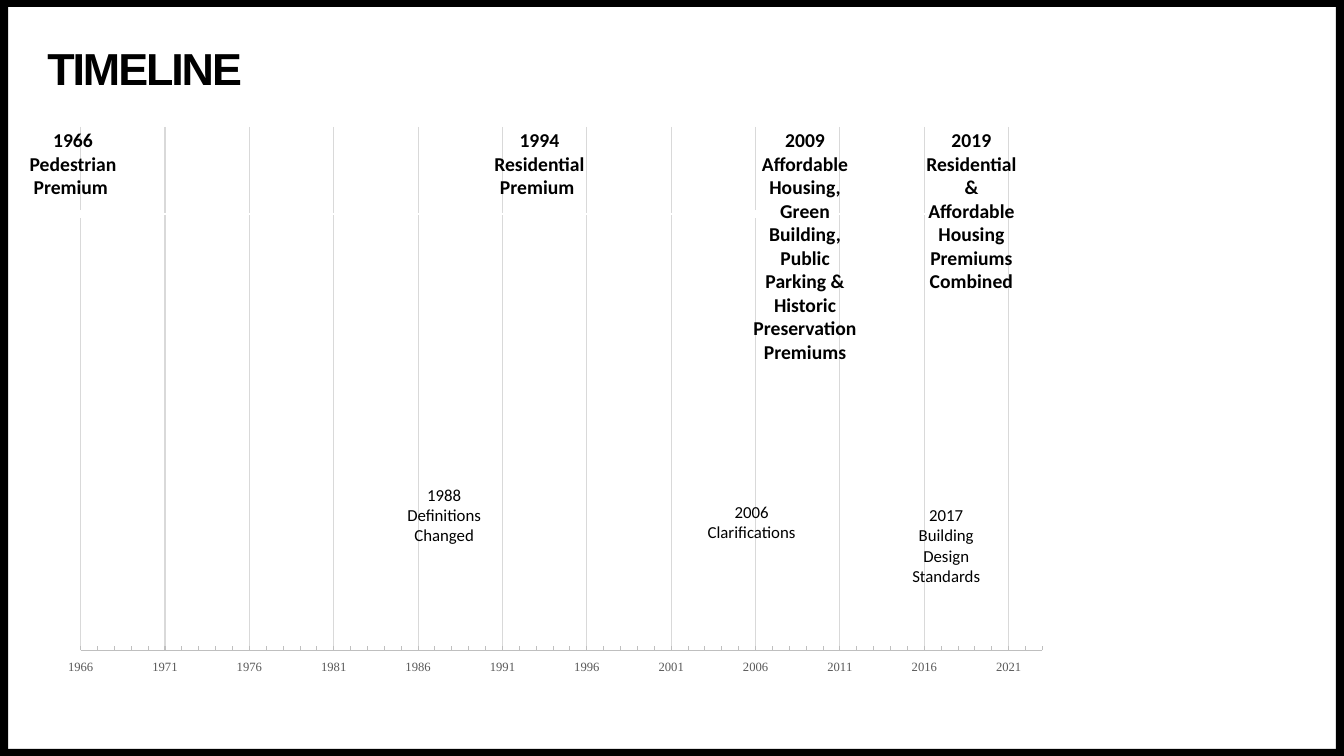
from lxml import etree
from pptx import Presentation
from pptx.chart.data import XyChartData
from pptx.dml.color import RGBColor
from pptx.enum.chart import XL_CHART_TYPE as ChartType, XL_MARKER_STYLE as Marker
from pptx.enum.chart import XL_TICK_LABEL_POSITION as LabelPlace, XL_TICK_MARK as Tick
from pptx.enum.shapes import MSO_SHAPE as Preset
from pptx.enum.text import MSO_ANCHOR as Anchor, MSO_AUTO_SIZE as AutoSize, PP_ALIGN as Align
from pptx.oxml.ns import qn
from pptx.util import Inches, Pt

WIDTH, HEIGHT = 13.33, 7.5
BORDERS = [
    (0, HEIGHT - 0.07, WIDTH, 0.07),
    (0, 0, WIDTH, 0.07),
    (0, 0, 0.08, HEIGHT),
    (WIDTH - 0.08, 0, 0.08, HEIGHT),
]
TITLE = ("TIMELINE", (0.47, 0.47, 10.06, 0.47))
CHART_AREA = (0.47, 1.14, 10.06, 5.61)
PLOT_AREA = (0.8, 1.26, 9.54, 5.19)
LEVEL = 100
YEAR_AXIS = {"minimum_scale": 1966, "maximum_scale": 2023, "major_unit": 5, "minor_unit": 1,
             "major_tick_mark": Tick.NONE, "minor_tick_mark": Tick.INSIDE,
             "has_major_gridlines": True, "tick_label_position": LabelPlace.LOW}
LEVEL_AXIS = {"minimum_scale": 0, "maximum_scale": 120,
              "has_major_gridlines": False, "visible": False}
PREMIUM = {"size": Pt(14), "bold": True, "name": "Calibri"}
CHANGE = {"size": Pt(12), "bold": False, "name": "Calibri"}
EVENTS = [
    (1966, ["Pedestrian Premium "], PREMIUM, (-0.14, 1.22, 1.73, 0.81)),
    (1988, ["Definitions Changed"], CHANGE, (3.91, 4.76, 0.99, 0.71)),
    (1994, ["Residential Premium "], PREMIUM, (4.74, 1.22, 1.22, 0.81)),
    (2006, ["Clarifications"], CHANGE, (6.89, 4.93, 1.13, 0.5)),
    (2009, ["Affordable Housing, Green Building, Public Parking & Historic Preservation",
            "Premiums"], PREMIUM, (7.37, 1.22, 1.23, 2.46)),
    (2017, ["Building Design Standards"], CHANGE, (8.82, 4.96, 1.13, 0.91)),
    (2019, ["Residential & Affordable Housing", "Premiums", "Combined"],
     PREMIUM, (9.02, 1.22, 1.23, 1.75)),
]


def color(value):
    return RGBColor.from_string(value)


def place(area):
    return [Inches(length) for length in area]


def assign(target, values):
    for name, value in values.items():
        setattr(target, name, value)


def paint(fill, value):
    fill.solid()
    fill.fore_color.rgb = color(value)


def style_line(line, value, width):
    paint(line.fill, value)
    line.width = Pt(width)


def style_font(font, value, **values):
    assign(font, values)
    font.color.rgb = color(value)


def add_text(page, lines, area, look, frame_look, para_look):
    box = page.shapes.add_textbox(*place(area))
    frame = box.text_frame
    assign(frame, {"word_wrap": True, **frame_look})
    for index, line in enumerate(lines):
        para = frame.paragraphs[0] if index == 0 else frame.add_paragraph()
        assign(para, para_look)
        span = para.add_run()
        span.text = line
        style_font(span.font, "000000", **look)
    return frame


def add_borders(page):
    for area in BORDERS:
        border = page.shapes.add_shape(Preset.RECTANGLE, *place(area))
        border.shadow.inherit = False
        paint(border.fill, "000000")
        border.line.fill.background()


def add_title(page):
    text, area = TITLE
    insets = dict.fromkeys(["margin_left", "margin_top", "margin_right", "margin_bottom"], 0)
    frame = add_text(page, [text], area, {"size": Pt(32), "bold": True, "name": "Arial"},
                     {"vertical_anchor": Anchor.MIDDLE, **insets}, {"line_spacing": 0.9})
    frame.paragraphs[0].runs[0]._r.get_or_add_rPr().set("spc", "-150")


def fix_plot(chart):
    plot = chart._chartSpace.chart.plotArea
    for old in plot.findall(qn("c:layout")):
        plot.remove(old)
    outer = etree.Element(qn("c:layout"))
    plot.insert(0, outer)
    manual = etree.SubElement(outer, qn("c:manualLayout"))
    left, top, width, height = CHART_AREA
    plot_left, plot_top, plot_width, plot_height = PLOT_AREA
    settings = {"layoutTarget": "inner", "xMode": "edge", "yMode": "edge",
                "x": (plot_left - left) / width, "y": (plot_top - top) / height,
                "w": plot_width / width, "h": plot_height / height}
    for name, value in settings.items():
        etree.SubElement(manual, qn("c:" + name)).set("val", str(value))


def add_timeline(page):
    data = XyChartData()
    points = data.add_series("Series 1")
    for year, *_ in EVENTS:
        points.add_data_point(year, LEVEL)
    chart = page.shapes.add_chart(ChartType.XY_SCATTER_LINES, *place(CHART_AREA), data).chart
    assign(chart, {"has_legend": False, "has_title": False})
    style_font(chart.font, "000000", size=Pt(10), name="Times New Roman")
    chart.plots[0].vary_by_categories = False

    years = chart.category_axis
    assign(years, YEAR_AXIS)
    assign(chart.value_axis, LEVEL_AXIS)
    style_font(years.tick_labels.font, "595959", size=Pt(9), name="Times New Roman")
    style_line(years.format.line, "BFBFBF", 0.75)
    style_line(years.major_gridlines.format.line, "D9D9D9", 0.75)

    series = chart.plots[0].series[0]
    series.smooth = False
    style_line(series.format.line, "FFFFFF", 1.5)
    assign(series.marker, {"style": Marker.CIRCLE, "size": 5})
    paint(series.marker.format.fill, "FFFFFF")
    style_line(series.marker.format.line, "FFFFFF", 0.75)
    fix_plot(chart)


def main():
    deck = Presentation()
    assign(deck, {"slide_width": Inches(WIDTH), "slide_height": Inches(HEIGHT)})
    page = deck.slides.add_slide(deck.slide_layouts[6])
    paint(page.background.fill, "FFFFFF")
    add_borders(page)
    add_title(page)
    add_timeline(page)
    for year, lines, look, area in EVENTS:
        add_text(page, [str(year), *lines], area, look,
                 {"auto_size": AutoSize.SHAPE_TO_FIT_TEXT}, {"alignment": Align.CENTER})
    deck.save("out.pptx")


if __name__ == "__main__":
    main()
